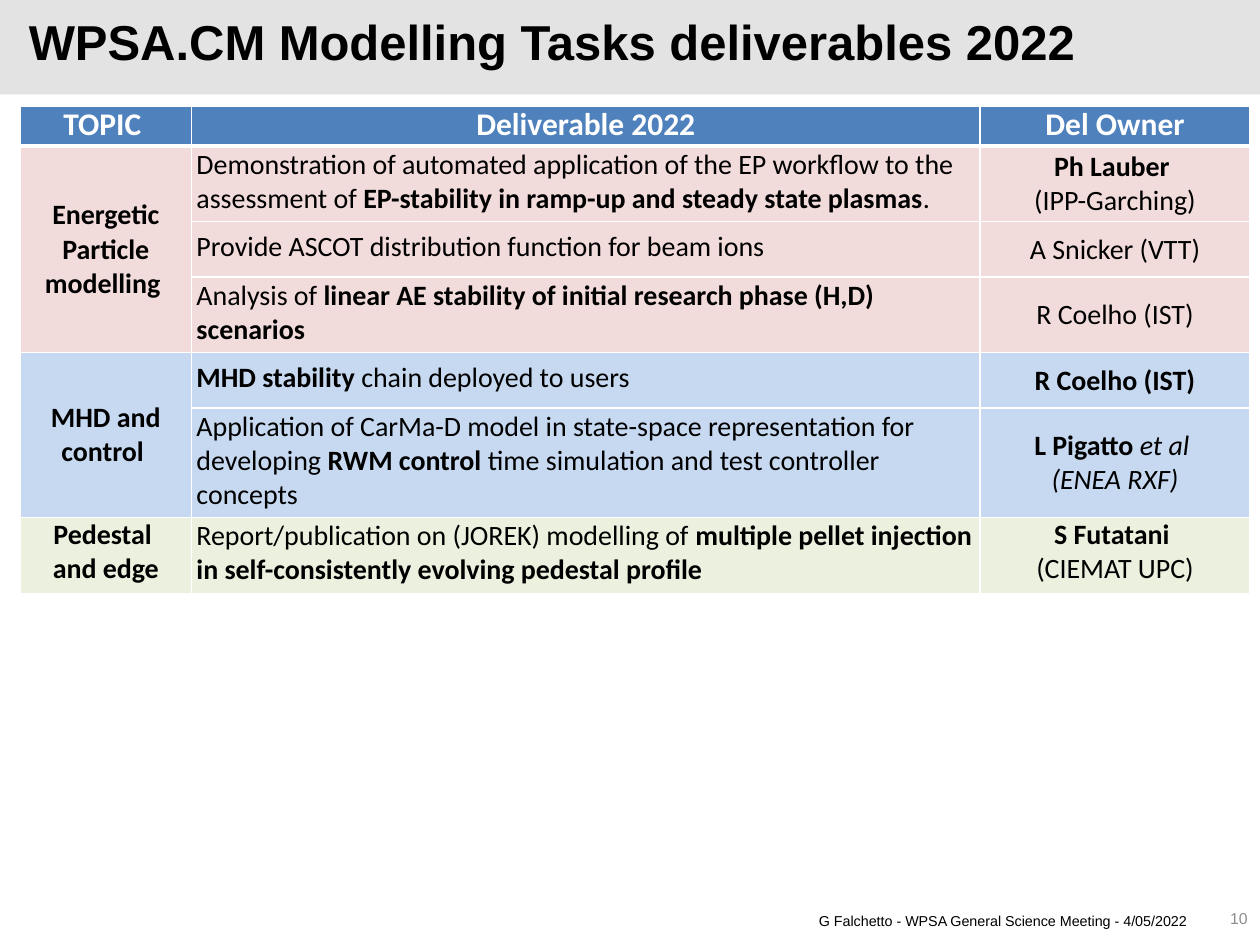
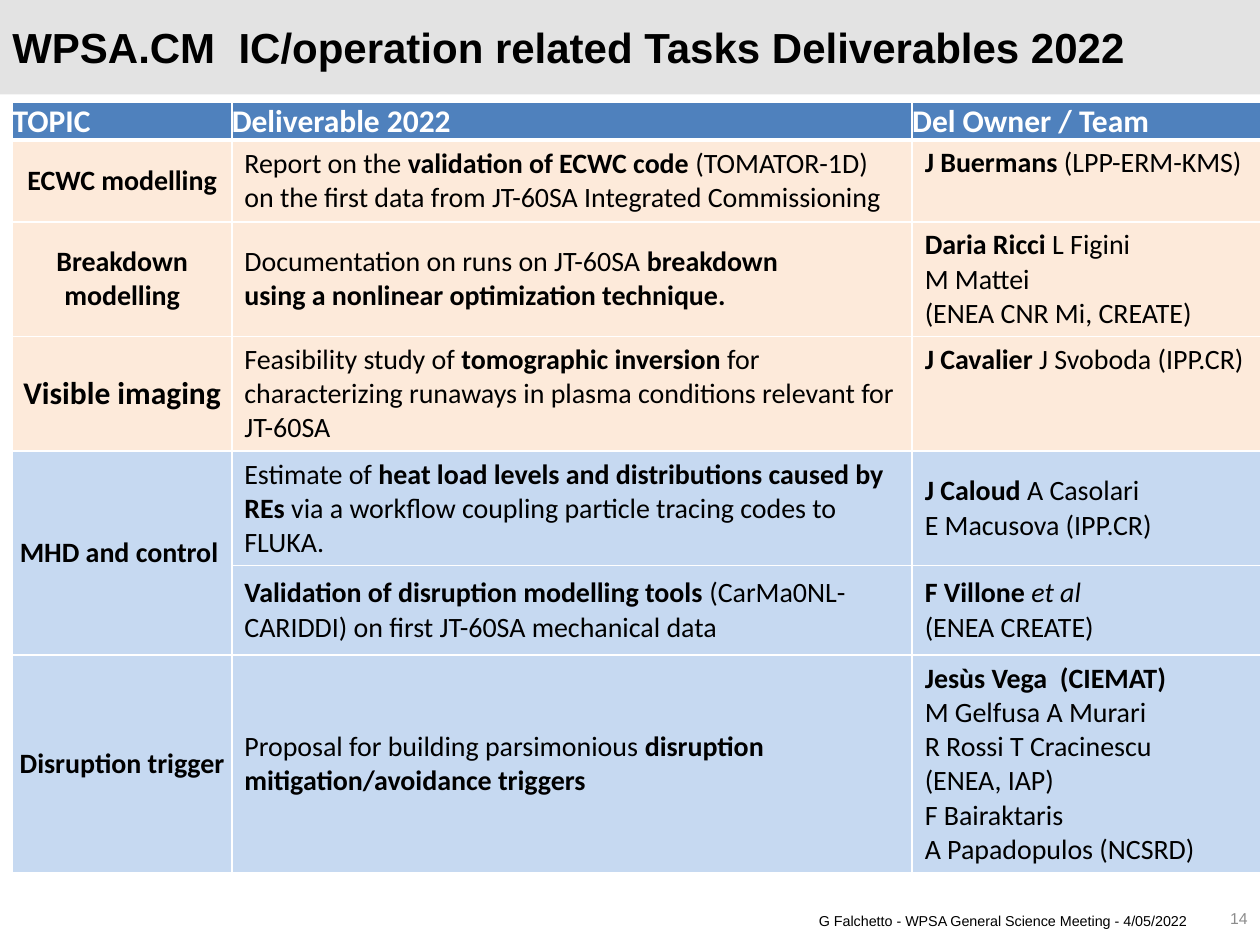
from lxml import etree
from pptx import Presentation
from pptx.dml.color import RGBColor
from pptx.enum.shapes import MSO_SHAPE
from pptx.enum.text import MSO_ANCHOR, PP_ALIGN
from pptx.oxml.ns import qn
from pptx.util import Inches, Pt

LEFT, CENTER, RIGHT = PP_ALIGN.LEFT, PP_ALIGN.CENTER, PP_ALIGN.RIGHT
TOP, MIDDLE = MSO_ANCHOR.TOP, MSO_ANCHOR.MIDDLE
RECTANGLE = MSO_SHAPE.RECTANGLE

BLACK = RGBColor(0x00, 0x00, 0x00)
WHITE = RGBColor(0xFF, 0xFF, 0xFF)
BAND_GREY = RGBColor(0xE3, 0xE3, 0xE3)
NUMBER_GREY = RGBColor(0x8C, 0x8C, 0x8C)
HEADER_BLUE = RGBColor(0x4F, 0x81, 0xBD)
PINK = RGBColor(0xF2, 0xDC, 0xDB)
LIGHT_BLUE = RGBColor(0xC6, 0xD9, 0xF1)
GREEN = RGBColor(0xEB, 0xF1, 0xDE)
PEACH = RGBColor(0xFD, 0xEA, 0xDA)

FOOTER = "G Falchetto - WPSA General Science Meeting - 4/05/2022"
NO_MARGINS = (0, 0, 0, 0)
NARROW_MARGINS = (0.04, 0.01, 0.04, 0.05)
DEFAULT_MARGINS = (0.1, 0.05, 0.1, 0.05)

# Rows: topic, deliverable, owner, fill, height. A topic of None continues the one above.
# In cell text, * switches bold and _ switches italic.
MODELLING_ROWS = [
    ("*Energetic Particle modelling ",
     "Demonstration of automated application of the EP workflow to the assessment of "
     "*EP-stability in ramp-up and steady state plasmas*.",
     "*Ph Lauber \n(IPP-Garching)", PINK, 0.6),
    (None, "Provide ASCOT distribution function for beam ions", "A Snicker (VTT)", PINK, 0.44),
    (None, "Analysis of *linear AE stability of initial research phase (H,D) scenarios",
     "R Coelho (IST)", PINK, 0.6),
    ("*MHD and control ", "*MHD stability *chain deployed to users",
     "*R Coelho (IST)", LIGHT_BLUE, 0.44),
    (None,
     "Application of CarMa-D model in state-space representation for developing "
     "*RWM control *time simulation and test controller concepts",
     "*L Pigatto *_et al \n_(ENEA RXF)", LIGHT_BLUE, 0.87),
    ("*Pedestal \n*and edge",
     "Report/publication on (JOREK) modelling of "
     "*multiple pellet injection in self-consistently evolving pedestal profile",
     "*S Futatani \n(CIEMAT UPC)", GREEN, 0.6),
]
OPERATION_ROWS = [
    ("*ECWC modelling",
     "Report on the *validation of ECWC code *(TOMATOR-1D) on the first data from "
     "JT-60SA Integrated Commissioning",
     "*J Buermans *(LPP-ERM-KMS)", PEACH, 0.65),
    ("*Breakdown modelling",
     "Documentation on runs on JT-60SA *breakdown\n*using a nonlinear optimization technique.",
     "*Daria Ricci *L Figini\nM Mattei\n(ENEA CNR Mi, CREATE)", PEACH, 0.91),
    ("*Visible imaging",
     "Feasibility study of *tomographic inversion *for characterizing runaways in plasma "
     "conditions relevant for JT-60SA",
     "*J Cavalier *J Svoboda (IPP.CR)", PEACH, 0.91),
    ("*MHD and control ",
     "Estimate of *heat load levels and distributions caused by REs *via a workflow "
     "coupling particle tracing codes to FLUKA.",
     "*J Caloud *A Casolari\nE Macusova (IPP.CR)", LIGHT_BLUE, 0.91),
    (None,
     "*Validation of disruption modelling tools *(CarMa0NL-CARIDDI) on first JT-60SA "
     "mechanical data",
     "*F Villone *_et al\n(ENEA CREATE)", LIGHT_BLUE, 0.71),
    ("*Disruption trigger",
     "Proposal for building parsimonious *disruption mitigation/avoidance triggers",
     "*Jesùs Vega  (CIEMAT)\nM Gelfusa A Murari\nR Rossi T Cracinescu\n(ENEA, IAP)\n"
     "F Bairaktaris\nA Papadopulos (NCSRD)", LIGHT_BLUE, 1.73),
]

SLIDES = [
    dict(title="WPSA.CM Modelling Tasks deliverables 2022", title_size=28,
         title_box=(0.13, 0.14, 8.78, 0.5), number="10",
         table_at=(0.16, 0.84), columns=(1.36, 6.26, 2.14),
         headings=("TOPIC ", "Deliverable 2022", "Del Owner"), heading_height=0.32,
         heading_align=CENTER, rows=MODELLING_ROWS, owner_align=CENTER,
         margins=(NO_MARGINS, NARROW_MARGINS, NO_MARGINS),
         top_cells=[(6, 0), (6, 1), (6, 2)], large_cells=[]),
    dict(title="WPSA.CM  IC/operation related Tasks Deliverables 2022", title_size=24,
         title_box=(0, 0.15, 9.06, 0.5), number="14",
         table_at=(0.1, 0.81), columns=(1.74, 5.4, 2.77),
         headings=("TOPIC", "Deliverable 2022", "Del Owner / Team"), heading_height=0.3,
         heading_align=LEFT, rows=OPERATION_ROWS, owner_align=LEFT,
         margins=(NO_MARGINS, DEFAULT_MARGINS, DEFAULT_MARGINS),
         top_cells=[(1, 2), (2, 2), (3, 1), (3, 2), (6, 2)], large_cells=[(3, 0)]),
]


def add_label(slide, box, text, size, color, align):
    """Add a one-line Arial text box and return its paragraph."""
    frame = slide.shapes.add_textbox(*[Inches(length) for length in box]).text_frame
    frame.word_wrap = True
    frame.vertical_anchor = MIDDLE
    paragraph = frame.paragraphs[0]
    paragraph.text = text
    paragraph.alignment = align
    font = paragraph.runs[0].font
    font.name, font.size, font.color.rgb = "Arial", Pt(size), color
    return paragraph


def fill_cell(cell, text, fill, color, size, align, anchor, margins, bottom_width=1):
    """Write marked-up text into a cell and give it a fill and white borders."""
    cell.margin_left, cell.margin_top, cell.margin_right, cell.margin_bottom = [
        Inches(margin) for margin in margins]
    cell.vertical_anchor = anchor
    for index, line in enumerate(text.split("\n")):
        frame = cell.text_frame
        paragraph = frame.paragraphs[0] if index == 0 else frame.add_paragraph()
        paragraph.alignment = align
        for bold_index, bold_part in enumerate(line.split("*")):
            for italic_index, part in enumerate(bold_part.split("_")):
                if part:
                    run = paragraph.add_run()
                    run.text = part
                    font = run.font
                    font.name, font.size, font.color.rgb = "Calibri", Pt(size), color
                    font.bold = bold_index % 2 == 1
                    font.italic = italic_index % 2 == 1
    properties = cell._tc.get_or_add_tcPr()
    for side, width in (("lnL", 1), ("lnR", 1), ("lnT", 1), ("lnB", bottom_width)):
        border = etree.SubElement(properties, qn("a:" + side), w=str(Pt(width)))
        solid = etree.SubElement(border, qn("a:solidFill"))
        etree.SubElement(solid, qn("a:srgbClr"), val=str(WHITE))
    cell.fill.solid()
    cell.fill.fore_color.rgb = fill


presentation = Presentation()
presentation.slide_width = Inches(10)
presentation.slide_height = Inches(7.5)

for content in SLIDES:
    slide = presentation.slides.add_slide(presentation.slide_layouts[6])

    band = slide.shapes.add_shape(RECTANGLE, 0, 0, Inches(10), Inches(0.75))
    band.shadow.inherit = False
    band.fill.solid()
    band.fill.fore_color.rgb = BAND_GREY
    band.line.fill.background()

    title = add_label(slide, content["title_box"], content["title"],
                      content["title_size"], BLACK, LEFT)
    title.line_spacing = Pt(24)
    title.runs[0].font.bold = True
    add_label(slide, (0.51, 7.16, 9.01, 0.29), FOOTER, 8.2, BLACK, RIGHT)
    add_label(slide, (9.32, 7.09, 0.68, 0.4), content["number"], 9, NUMBER_GREY, RIGHT)

    rows = content["rows"]
    heights = [content["heading_height"]] + [row[-1] for row in rows]
    left, top = content["table_at"]
    table = slide.shapes.add_table(
        len(heights), 3, Inches(left), Inches(top),
        Inches(sum(content["columns"])), Inches(sum(heights))).table
    table.first_row = table.horz_banding = False
    for column, width in zip(table.columns, content["columns"]):
        column.width = Inches(width)
    for table_row, height in zip(table.rows, heights):
        table_row.height = Inches(height)

    for column, heading in enumerate(content["headings"]):
        fill_cell(table.cell(0, column), "*" + heading, HEADER_BLUE, WHITE, 18,
                  content["heading_align"], TOP, NO_MARGINS, bottom_width=3)

    alignments = (CENTER, LEFT, content["owner_align"])
    topic_row = 1
    for row_index, (*texts, fill, height) in enumerate(rows, start=1):
        for column, text in enumerate(texts):
            position = (row_index, column)
            anchor = TOP if position in content["top_cells"] else MIDDLE
            size = 18 if position in content["large_cells"] else 16
            fill_cell(table.cell(*position), text or "", fill, BLACK, size,
                      alignments[column], anchor, content["margins"][column])
        if texts[0]:
            topic_row = row_index
        is_last = row_index == len(rows) or rows[row_index][0]
        if is_last and topic_row < row_index:
            table.cell(topic_row, 0).merge(table.cell(row_index, 0))

presentation.save("out.pptx")
